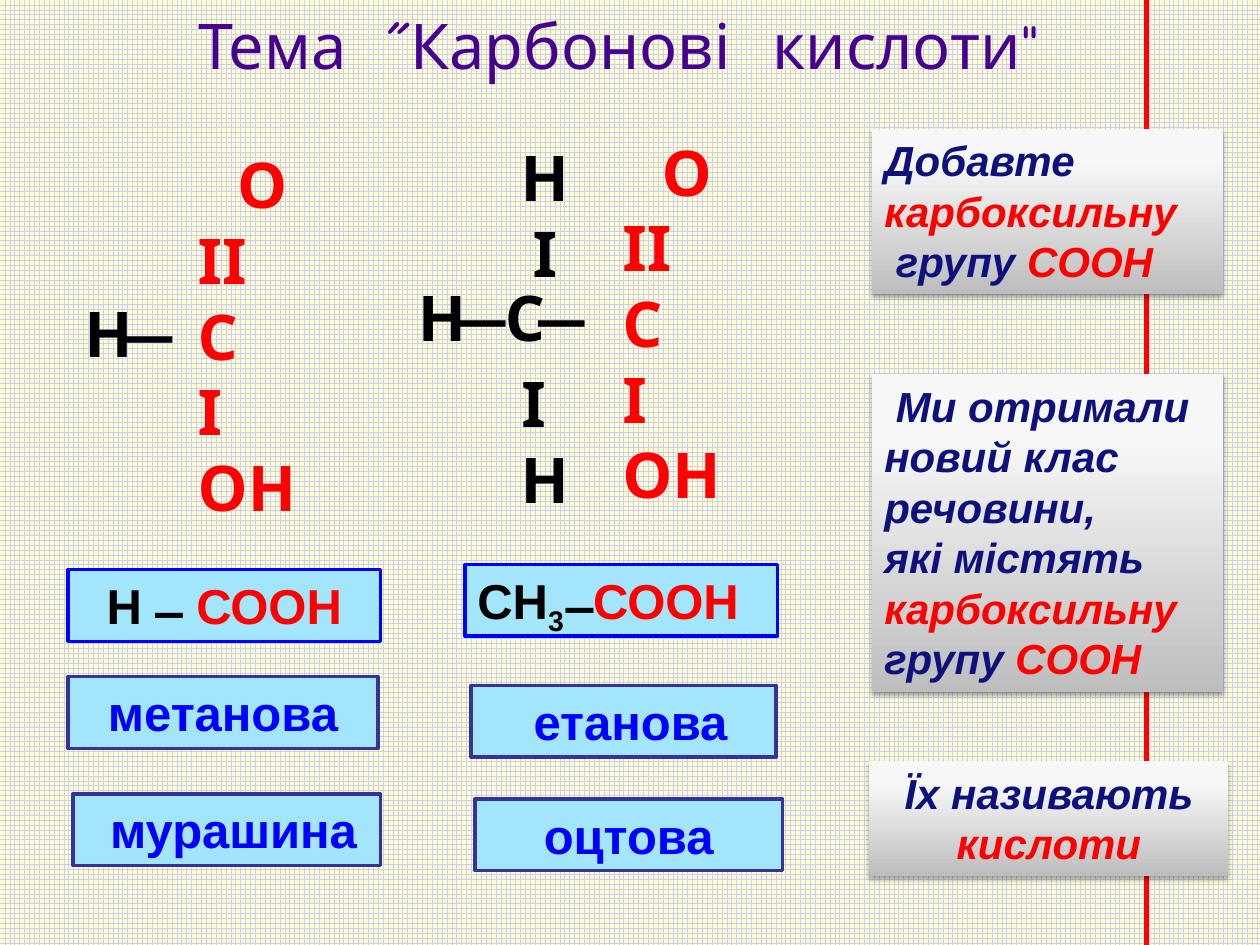
"""Build the slide on carboxylic acids: formulas, names and explanations."""
from lxml import etree
from pptx import Presentation
from pptx import util as u
from pptx.dml.color import RGBColor
from pptx.enum import dml, shapes, text
from pptx.oxml import ns

COLORS = {
    "paper": "FFFFCC", "grid": "CCCCFF", "red": "FF0000", "black": "000000",
    "violet": "47008E", "navy": "0E117C", "blue": "0000FF", "indigo": "333399",
    "sky": "A3E6FB", "grey": "BEBEBE", "light": "F7F7F7",
}
RGB = {name: RGBColor.from_string(value) for name, value in COLORS.items()}
LEFT, CENTER = text.PP_ALIGN.LEFT, text.PP_ALIGN.CENTER


def write(shape, paragraphs, size, font, align=LEFT, bold=True, italic=False):
    """Fill a shape with paragraphs given as lists of (words, colour) runs."""
    frame = shape.text_frame
    frame.word_wrap = True
    frame.vertical_anchor = text.MSO_ANCHOR.TOP
    for index, runs in enumerate(paragraphs):
        paragraph = frame.add_paragraph() if index else frame.paragraphs[0]
        paragraph.alignment = align
        for words, color in runs:
            run = paragraph.add_run()
            run.text = words
            run.font.size, run.font.name = u.Pt(size), font
            run.font.bold, run.font.italic = bold, italic
            run.font.color.rgb = RGB[color]
    return frame


def add_box(box, line=None):
    """Add a rectangle without shadow, filled in sky blue if it has a line."""
    shape = slide.shapes.add_shape(shapes.MSO_SHAPE.RECTANGLE, *map(u.Inches, box))
    shape.shadow.inherit = False
    if line:
        shape.fill.solid()
        shape.fill.fore_color.rgb = RGB["sky"]
        shape.line.color.rgb = RGB[line]
        shape.line.width = u.Pt(2)
    else:
        shape.line.fill.background()
    return shape


presentation = Presentation()
presentation.slide_width, presentation.slide_height = u.Inches(10), u.Inches(7.5)
slide = presentation.slides.add_slide(presentation.slide_layouts[6])
background = slide.background.fill
background.patterned()
background.pattern = dml.MSO_PATTERN.LARGE_GRID
background.fore_color.rgb, background.back_color.rgb = RGB["grid"], RGB["paper"]

margin_line = slide.shapes.add_connector(
    shapes.MSO_CONNECTOR.STRAIGHT, u.Inches(9.1), 0, u.Inches(9.1), u.Inches(7.5))
margin_line.line.color.rgb = RGB["red"]
margin_line.line.width = u.Pt(3)
etree.SubElement(margin_line._element.spPr, ns.qn("a:effectLst"))

title = slide.shapes.add_textbox(*map(u.Inches, (0.98, 0, 7.69, 0.81)))
write(title, [[(" Тема  ˝Карбонові  кислоти\"", "violet")]], 36, "Comic Neue",
      CENTER, bold=False).word_wrap = False

formulas = [
    ((3.04, 2.16, 1.94, 0.71), [" Н ̶ С ̶"], "black", LEFT),
    ((3.86, 1.05, 0.93, 3.13), ["Н", "Ι", "Ι ", "Н"], "black", CENTER),
    ((4.84, 1.01, 1.22, 3.13), ["О", "ΙΙ", "С", "Ι ", "ОН"], "red", LEFT),
    ((0.42, 2.29, 1.19, 0.71), ["Н ̶ "], "black", CENTER),
    ((1.47, 1.11, 1.22, 3.13), ["О", "ΙΙ", "С", "Ι ", "ОН"], "red", LEFT),
]
for box, symbols, color, align in formulas:
    formula = slide.shapes.add_textbox(*map(u.Inches, box))
    frame = write(formula, [[(symbol, color)] for symbol in symbols], 36,
                  "Comic Neue", align)
    if symbols[0] == "О":
        frame.paragraphs[0].alignment = CENTER
    if len(symbols) == 4:
        frame.paragraphs[2].space_before = u.Pt(43)

cards = [
    ((6.92, 1.02, 2.79, 1.31), LEFT, [
        [("Добавте", "navy")],
        [("карбоксильну", "red")],
        [(" групу ", "navy"), ("СООН", "red")]]),
    ((6.92, 2.97, 2.79, 2.52), LEFT, [
        [(" Ми отримали новий клас речовини,", "navy")],
        [("які містять ", "navy"), ("карбоксильну", "red"),
         (" групу ", "navy"), ("СООН", "red")]]),
    ((6.9, 6.04, 2.85, 0.91), CENTER, [
        [(" Їх називають ", "navy"), (" кислоти", "red")]]),
]
for box, align, paragraphs in cards:
    card = add_box(box)
    card.fill.gradient()
    card.fill.gradient_angle = 90
    for stop, color, position in zip(card.fill.gradient_stops, ("grey", "light"), (0, 0.8)):
        stop.color.rgb, stop.position = RGB[color], position
    effects = card._element.spPr.find(ns.qn("a:effectLst"))
    shadow = etree.SubElement(
        effects, ns.qn("a:outerShdw"), blurRad=str(u.Pt(3.1)), dist=str(u.Pt(1.8)),
        dir="5400000", rotWithShape="0")
    shade = etree.SubElement(shadow, ns.qn("a:srgbClr"), val=COLORS["black"])
    etree.SubElement(shade, ns.qn("a:alpha"), val="35000")
    write(card, paragraphs, 24, "Arial", align, italic=True)

labels = [
    ((0.54, 4.52, 2.48, 0.57), "blue", CENTER, [("Н  ̶  ", "black"), ("СООН", "red")]),
    ((0.54, 5.37, 2.46, 0.57), "indigo", CENTER, [("метанова", "blue")]),
    ((3.69, 4.48, 2.48, 0.57), "blue", LEFT,
     [("СН", "black"), ("3  ", "black"), ("̶ ", "black"), ("СООН", "red")]),
    ((3.74, 5.44, 2.42, 0.57), "indigo", CENTER, [(" етанова", "blue")]),
    ((0.58, 6.3, 2.44, 0.57), "indigo", CENTER, [(" мурашина", "blue")]),
    ((3.77, 6.34, 2.44, 0.57), "indigo", CENTER, [("оцтова", "blue")]),
]
for box, line, align, runs in labels:
    frame = write(add_box(box, line), [runs], 28, "Arial", align)
    for run in frame.paragraphs[0].runs:
        if run.text.startswith("3"):
            run.font._element.set("baseline", "-25000")

presentation.save("out.pptx")
